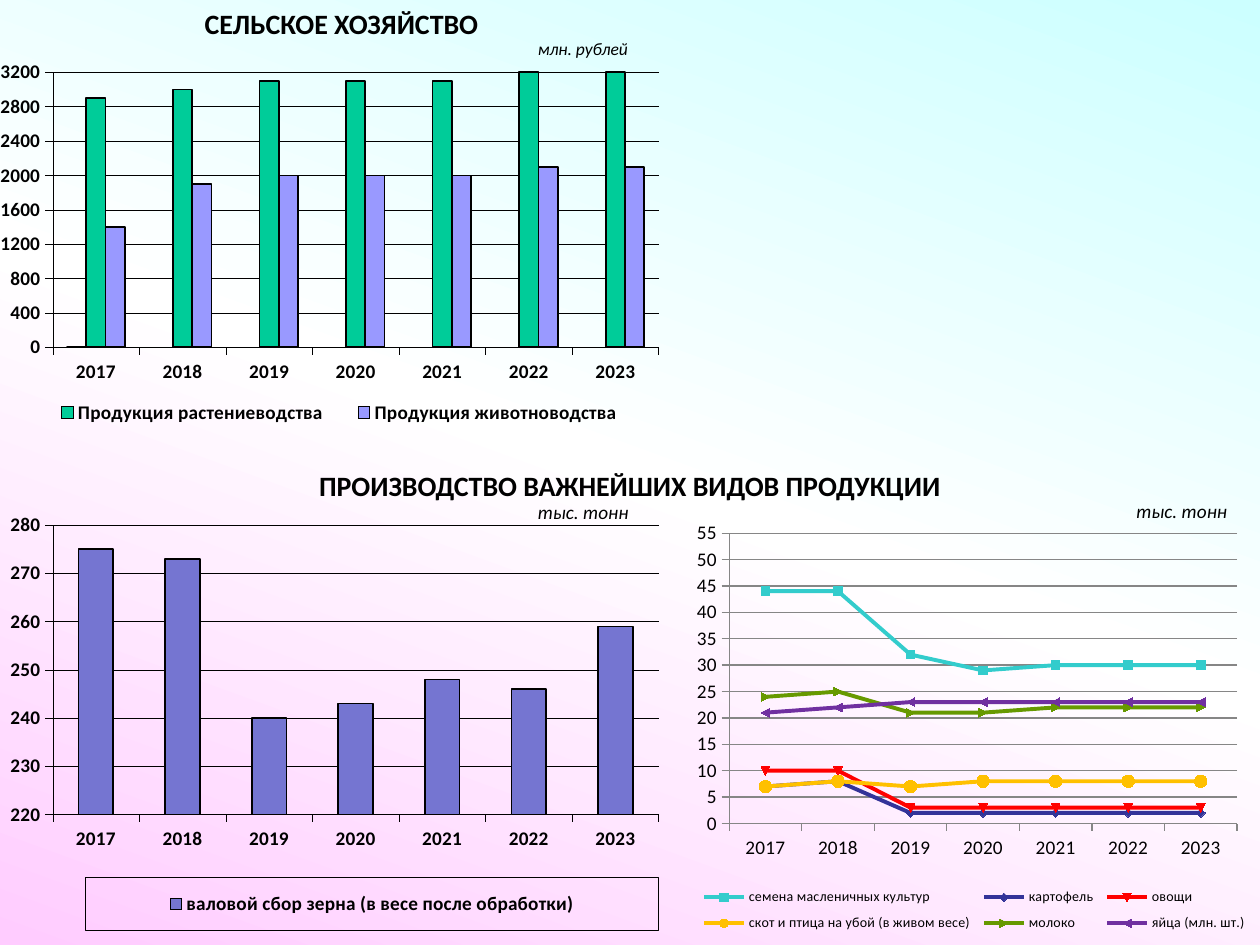
from copy import deepcopy

from pptx import Presentation
from pptx.chart.data import CategoryChartData
from pptx.dml.color import RGBColor
from pptx.enum.chart import XL_CHART_TYPE as ChartType
from pptx.enum.chart import XL_LEGEND_POSITION as LegendPos
from pptx.enum.chart import XL_MARKER_STYLE as Marker
from pptx.enum.chart import XL_TICK_LABEL_POSITION as LabelPos
from pptx.enum.chart import XL_TICK_MARK as Tick
from pptx.enum.text import MSO_ANCHOR, MSO_AUTO_SIZE
from pptx.enum.text import PP_ALIGN as Align
from pptx.oxml import parse_xml
from pptx.oxml.ns import nsdecls, qn
from pptx.util import Inches, Pt

BLACK = RGBColor(0x00, 0x00, 0x00)
WHITE = RGBColor(0xFF, 0xFF, 0xFF)
GREY = RGBColor(0x86, 0x86, 0x86)
CYAN = RGBColor(0xCC, 0xFF, 0xFF)
PINK = RGBColor(0xFF, 0xCC, 0xFF)
PALE_BLUE = RGBColor(0xBB, 0xE0, 0xE3)
GREEN = RGBColor(0x00, 0xCC, 0x99)
LILAC = RGBColor(0x99, 0x99, 0xFF)
VIOLET = RGBColor(0x75, 0x75, 0xD1)
TEAL = RGBColor(0x33, 0xCC, 0xCC)
NAVY = RGBColor(0x33, 0x33, 0x99)
RED = RGBColor(0xFF, 0x00, 0x00)
GOLD = RGBColor(0xFF, 0xC0, 0x00)
OLIVE = RGBColor(0x66, 0x99, 0x00)
PURPLE = RGBColor(0x70, 0x30, 0xA0)

YEARS = [str(year) for year in range(2017, 2024)]
FARM_OUTPUT = [
    ("Series 1", PALE_BLUE, [0] + [None] * 6),
    ("Продукция растениеводства", GREEN, [2900, 3000, 3100, 3100, 3100, 3200, 3300]),
    ("Продукция животноводства", LILAC, [1400, 1900, 2000, 2000, 2000, 2100, 2100]),
]
GRAIN = [
    ("валовой сбор зерна (в весе после обработки)", VIOLET,
     [275, 273, 240, 243, 248, 246, 259]),
]
PRODUCTS = [
    ("семена масленичных культур", TEAL, [44, 44, 32, 29, 30, 30, 30]),
    ("картофель", NAVY, [7, 8, 2, 2, 2, 2, 2]),
    ("овощи", RED, [10, 10, 3, 3, 3, 3, 3]),
    ("скот и птица на убой (в живом весе)", GOLD, [7, 8, 7, 8, 8, 8, 8]),
    ("молоко", OLIVE, [24, 25, 21, 21, 22, 22, 22]),
    ("яйца (млн. шт.)", PURPLE, [21, 22, 23, 23, 23, 23, 23]),
]


def xml(tag, body):
    return parse_xml(f'<c:{tag} {nsdecls("c", "a")}>{body}</c:{tag}>')


def set_layout(element, index, box, inner=False):
    for old in element.findall(qn("c:layout")):
        element.remove(old)
    target = '<c:layoutTarget val="inner"/>' if inner else ""
    modes = '<c:xMode val="edge"/><c:yMode val="edge"/>'
    sizes = "".join(f'<c:{k} val="{v}"/>' for k, v in zip("xywh", box))
    element.insert(index, xml("layout", f"<c:manualLayout>{target}{modes}{sizes}</c:manualLayout>"))


class SlideBuilder:
    font = {"name": "Calibri"}

    def __init__(self, s):
        self.s = s

    def style(self, font, **values):
        for key, value in {**self.font, **values}.items():
            setattr(font, key, value)
        font.color.rgb = BLACK

    def background(self, colors, angle):
        fill = self.s.background.fill
        fill.gradient()
        fill.gradient_angle = angle
        stops = self.s.element.find(".//" + qn("a:gsLst"))
        stops.append(deepcopy(stops[-1]))
        for i, (stop, color) in enumerate(zip(fill.gradient_stops, colors)):
            stop.color.rgb = color
            stop.position = i / (len(colors) - 1)

    def put_text(self, sp, text, align, wrap, **values):
        tf = sp.text_frame
        settings = {"word_wrap": wrap, "auto_size": MSO_AUTO_SIZE.NONE,
                    "vertical_anchor": MSO_ANCHOR.TOP}
        for key, value in settings.items():
            setattr(tf, key, value)
        p = tf.paragraphs[0]
        p.alignment = align
        r = p.add_run()
        r.text = text
        self.style(r.font, **values)

    def title(self, text, box):
        sp = self.s.shapes.title
        for key, value in zip(("left", "top", "width", "height"), box):
            setattr(sp, key, Inches(value))
        self.put_text(sp, text, Align.CENTER, True, size=Pt(16), bold=True)

    def heading(self, text, box):
        sp = self.s.shapes.add_textbox(*map(Inches, box))
        self.put_text(sp, text, Align.CENTER, True, size=Pt(16), bold=True)

    def unit(self, text, box, size):
        sp = self.s.shapes.add_textbox(*map(Inches, box))
        self.put_text(sp, text, Align.LEFT, False, size=Pt(size), italic=True)

    def chart(self, kind, box, series, scale, plot, legend, bold, line):
        data = CategoryChartData()
        data.categories = YEARS
        for name, _, values in series:
            data.add_series(name, values)
        chart = self.s.shapes.add_chart(kind, *map(Inches, box), data).chart
        chart.has_title = False
        self.style(chart.font, size=Pt(11), bold=bold)
        root = chart.element
        root.find(qn("c:chart")).addnext(xml("spPr", "<a:noFill/><a:ln><a:noFill/></a:ln>"))
        area = root.find(".//" + qn("c:plotArea"))
        set_layout(area, 0, plot, inner=True)
        area.append(xml("spPr", "<a:noFill/>"))
        self.axes(chart, scale, *line)
        chart.has_legend = True
        chart.legend.position = LegendPos.RIGHT
        chart.legend.include_in_layout = False
        set_layout(chart.legend._element, 1, legend)
        return chart

    def axes(self, chart, scale, color, width):
        axis = chart.value_axis
        names = ("minimum_scale", "maximum_scale", "major_unit")
        for key, value in zip(names, scale):
            setattr(axis, key, value)
        axis.has_major_gridlines = True
        chart.category_axis.tick_label_position = LabelPos.LOW
        for item in (axis, chart.category_axis):
            item.major_tick_mark = Tick.OUTSIDE
        for item in (axis, chart.category_axis, axis.major_gridlines):
            item.format.line.color.rgb = color
            item.format.line.width = Pt(width)

    def columns(self, box, series, scale, plot, legend):
        chart = self.chart(ChartType.COLUMN_CLUSTERED, box, series, scale, plot,
                           legend, True, (BLACK, 0.25))
        chart.plots[0].gap_width = 150
        chart.plots[0].vary_by_categories = False
        for ser, (_, color, _) in zip(chart.plots[0].series, series):
            ser.format.fill.solid()
            ser.format.fill.fore_color.rgb = color
            ser.format.line.color.rgb = BLACK
            ser.format.line.width = Pt(1)
        return chart.legend._element

    def lines(self, box, series, scale, plot, legend):
        chart = self.chart(ChartType.LINE_MARKERS, box, series, scale, plot,
                           legend, False, (GREY, 0.75))
        self.style(chart.legend.font, size=Pt(8))
        for ser, (_, color, _) in zip(chart.plots[0].series, series):
            ser.smooth = False
            ser.format.line.color.rgb = color
            ser.format.line.width = Pt(2.25)
            circle = color == GOLD
            ser.marker.style = Marker.CIRCLE if circle else Marker.AUTOMATIC
            ser.marker.size = 7 if circle else 5
            ser.marker.format.fill.solid()
            ser.marker.format.fill.fore_color.rgb = color
            ser.marker.format.line.color.rgb = color


def main():
    prs = Presentation()
    prs.slide_width, prs.slide_height = Inches(10), Inches(7.5)
    b = SlideBuilder(prs.slides.add_slide(prs.slide_layouts[5]))
    b.background([CYAN, WHITE, PINK], 250)

    legend = b.columns((0, 0, 5.23, 3.83), FARM_OUTPUT, (0, 3200, 400),
                       (0.08, 0.15, 0.92, 0.57), (0.05, 0.82, 0.93, 0.07))
    legend.insert(1, xml("legendEntry", '<c:idx val="0"/><c:delete val="1"/>'))
    b.title("СЕЛЬСКОЕ ХОЗЯЙСТВО", (0, 0, 5.42, 0.62))
    b.unit("млн. рублей", (4.17, 0.25, 0.93, 0.27), 10)

    legend = b.columns((0, 3.67, 5.23, 3.83), GRAIN, (220, 280, 10),
                       (0.08, 0.13, 0.92, 0.6), (0.13, 0.86, 0.87, 0.11))
    border = '<a:noFill/><a:ln w="3175"><a:solidFill><a:srgbClr val="000000"/></a:solidFill></a:ln>'
    legend.find(qn("c:overlay")).addnext(xml("spPr", border))
    b.heading("ПРОИЗВОДСТВО ВАЖНЕЙШИХ ВИДОВ ПРОДУКЦИИ", (0, 3.67, 10, 0.38))
    b.unit("тыс. тонн", (4.17, 3.92, 0.93, 0.29), 11)

    b.lines((5.47, 4.06, 4.53, 3.44), PRODUCTS, (0, 55, 5),
            (0.07, 0.05, 0.89, 0.67), (0.01, 0.85, 0.98, 0.14))
    b.unit("тыс. тонн", (8.92, 3.91, 1.08, 0.29), 11)
    prs.save("out.pptx")


if __name__ == "__main__":
    main()
